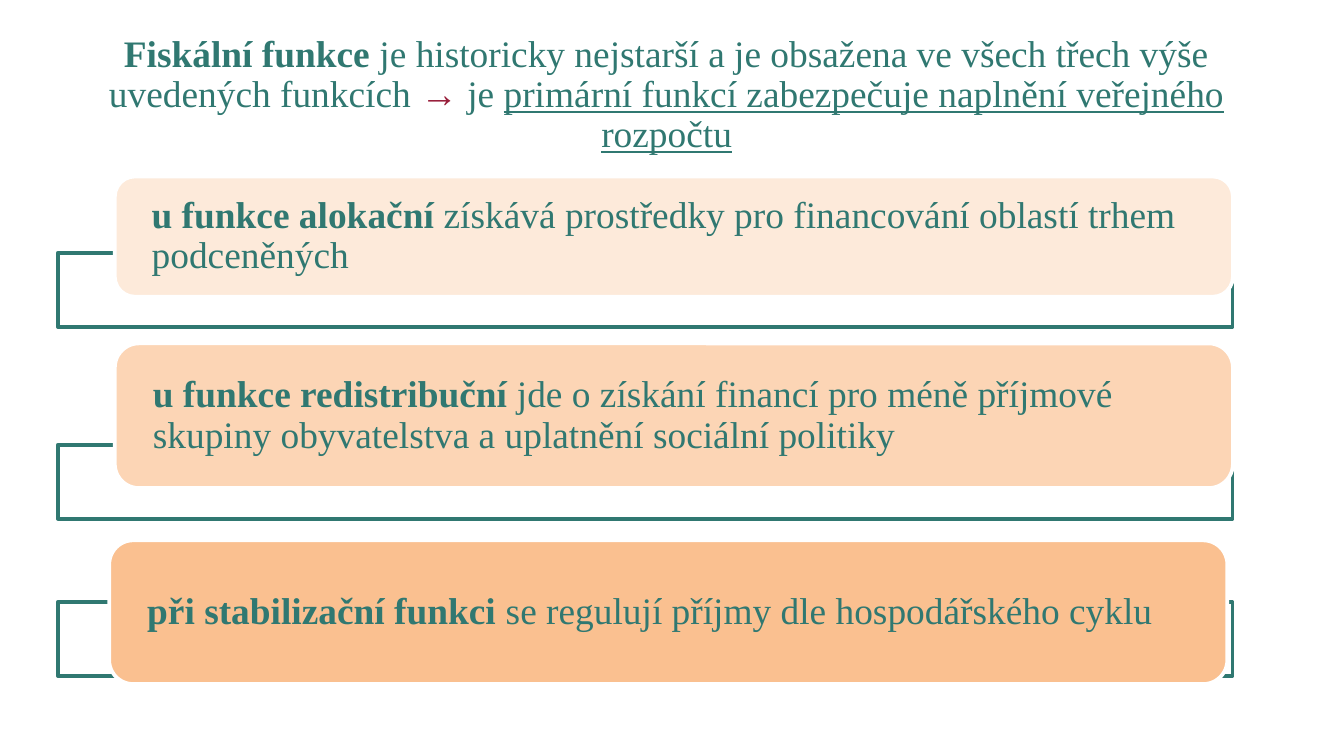
import pptx
import pptx.dml.color
import pptx.enum.shapes
import pptx.enum.text
import pptx.oxml
import pptx.oxml.ns
import pptx.util

Pt = pptx.util.Pt
SHAPES = pptx.enum.shapes.MSO_SHAPE
ALIGN = pptx.enum.text.PP_ALIGN
ANCHOR = pptx.enum.text.MSO_ANCHOR

COLOURS = {
    "teal": "307871",
    "crimson": "981E3A",
    "white": "FFFFFF",
    "pale": "FDEADA",
    "peach": "FCD5B5",
    "orange": "FAC090",
}


def colour(name):
    return pptx.dml.color.RGBColor.from_string(COLOURS[name])


class SlideBuilder:
    font_format = {"name": "Times New Roman", "size": Pt(20)}
    line_spacing = 0.9
    line_width = Pt(2)

    def __init__(self, slide):
        self.slide = slide

    def add_spans(self, frame, spans, align, frame_format):
        """Fill a frame with one paragraph of (text, colour, font format) spans."""
        for name, value in frame_format.items():
            setattr(frame, name, value)
        para = frame.paragraphs[0]
        para.alignment = align
        para.line_spacing = self.line_spacing
        for text, colour_name, extra in spans:
            span = para.add_run()
            span.text = text
            for name, value in {**self.font_format, **extra}.items():
                setattr(span.font, name, value)
            span.font.color.rgb = colour(colour_name)

    def shape(self, kind, bounds, fill, line):
        shape = self.slide.shapes.add_shape(kind, *map(Pt, bounds))
        shape.shadow.inherit = False
        shape.fill.solid()
        shape.fill.fore_color.rgb = colour(fill)
        shape.line.color.rgb = colour(line)
        shape.line.width = self.line_width
        return shape

    def strip(self, top):
        """Draw the outlined strip behind a card, with a slightly clear fill."""
        strip = self.shape(SHAPES.RECTANGLE, (31, top, 629.3, 39.6), "white", "teal")
        fill_colour = strip.element.find(".//" + pptx.oxml.ns.qn("a:srgbClr"))
        fill_colour.append(pptx.oxml.parse_xml(
            f'<a:alpha {pptx.oxml.ns.nsdecls("a")} val="90000"/>'))

    def card(self, left, top, height, fill, spans):
        card = self.shape(SHAPES.ROUNDED_RECTANGLE, (left, top, 599, height), fill, "white")
        self.add_spans(card.text_frame, spans, ALIGN.LEFT, {
            "word_wrap": True, "vertical_anchor": ANCHOR.MIDDLE,
            "margin_left": Pt(16.6), "margin_right": Pt(16.6),
            "margin_top": 0, "margin_bottom": 0})

    def text(self, bounds, spans):
        box = self.slide.shapes.add_textbox(*map(Pt, bounds))
        self.add_spans(box.text_frame, spans, ALIGN.CENTER, {
            "word_wrap": True,
            "auto_size": pptx.enum.text.MSO_AUTO_SIZE.SHAPE_TO_FIT_TEXT})


# strip top, card left, card top, card height, fill, bold lead, rest
FUNCTIONS = [
    (135.5, 61.5, 94.6, 64.4, "pale", "u funkce alokační ",
     "získává prostředky pro financování oblastí trhem podceněných"),
    (238.3, 61.5, 184, 77.5, "peach", "u funkce redistribuční ",
     "jde o získání financí pro méně příjmové skupiny obyvatelstva "
     "a uplatnění sociální politiky"),
    (322.5, 58.5, 289.5, 77, "orange", "při stabilizační funkci ",
     "se regulují příjmy dle hospodářského cyklu"),
]


def main():
    deck = pptx.Presentation()
    deck.slide_width, deck.slide_height = Pt(720), Pt(405)
    builder = SlideBuilder(deck.slides.add_slide(deck.slide_layouts[6]))

    for strip_top, left, top, height, fill, lead, rest in FUNCTIONS:
        builder.strip(strip_top)
        builder.card(left, top, height, fill,
                     [(lead, "teal", {"bold": True}), (rest, "teal", {})])

    builder.text((31, 15.1, 652.3, 72.7), [
        ("Fiskální funkce", "teal", {"bold": True}),
        (" je historicky nejstarší a je obsažena ve všech třech výše uvedených funkcích ",
         "teal", {}),
        ("→ ", "crimson", {}),
        ("je ", "teal", {}),
        ("primární funkcí zabezpečuje naplnění veřejného rozpočtu", "teal",
         {"underline": True}),
    ])
    deck.save("out.pptx")


if __name__ == "__main__":
    main()
